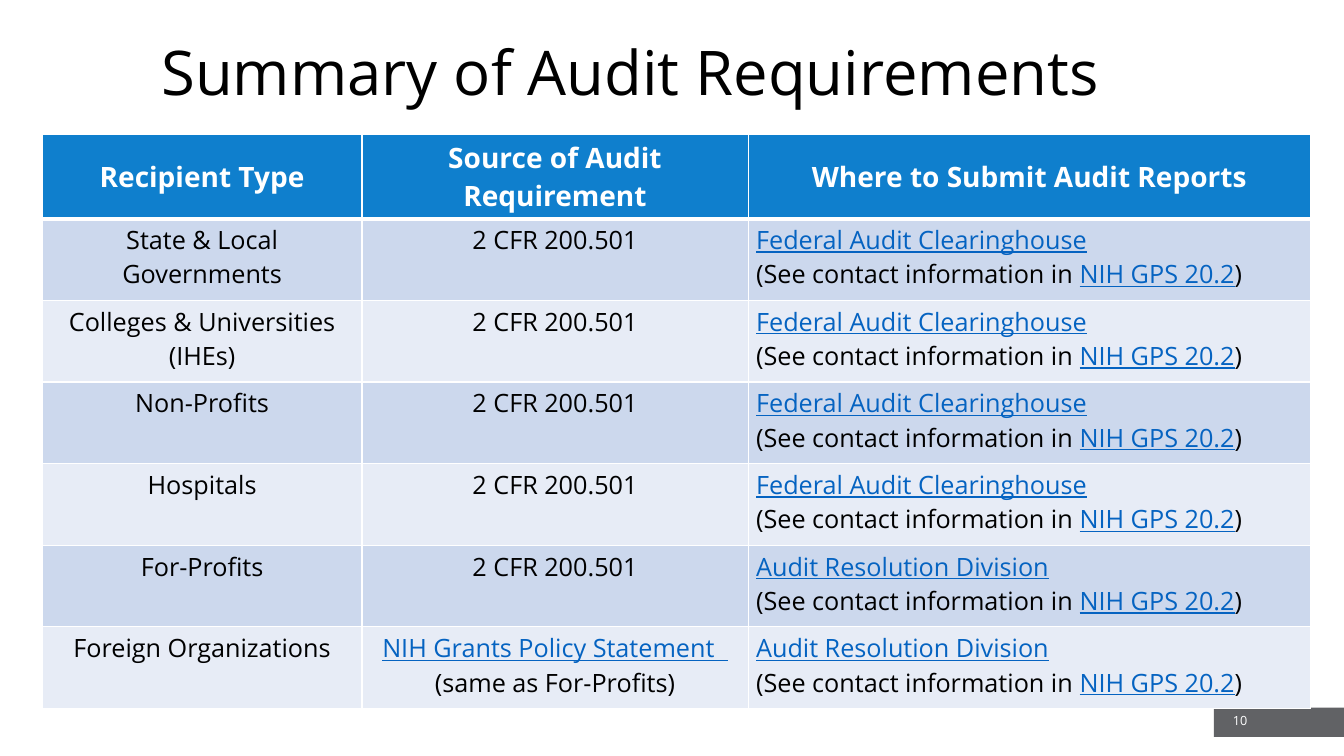
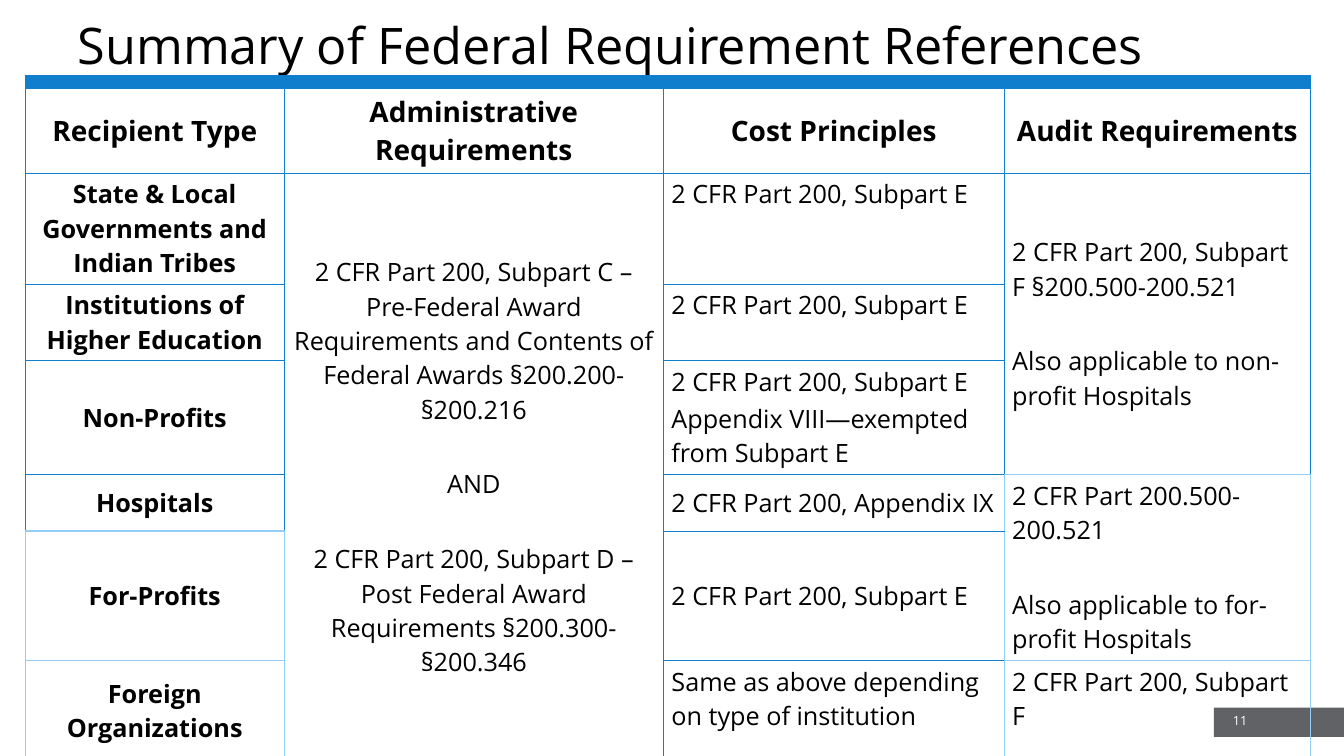
from dataclasses import dataclass

from lxml import etree
from pptx import Presentation
from pptx.dml.color import RGBColor
from pptx.enum.shapes import MSO_SHAPE
from pptx.enum.text import MSO_ANCHOR, MSO_AUTO_SIZE, PP_ALIGN
from pptx.oxml.ns import qn
from pptx.util import Inches, Pt

LEFT, CENTER, RIGHT = PP_ALIGN.LEFT, PP_ALIGN.CENTER, PP_ALIGN.RIGHT
TOP, MIDDLE = MSO_ANCHOR.TOP, MSO_ANCHOR.MIDDLE
RECTANGLE = MSO_SHAPE.RECTANGLE
NO_AUTOFIT = MSO_AUTO_SIZE.NONE

FONT = "Open Sans"
BLACK = RGBColor(0x00, 0x00, 0x00)
WHITE = RGBColor(0xFF, 0xFF, 0xFF)
BLUE = RGBColor(0x0F, 0x7F, 0xCD)
SKY = RGBColor(0x93, 0xCE, 0xF7)
LINK = RGBColor(0x05, 0x63, 0xC1)
GRAY = RGBColor(0x61, 0x62, 0x65)
ROW_FILLS = (RGBColor(0xCC, 0xD8, 0xED), RGBColor(0xE7, 0xEC, 0xF6))

TITLE_ONLY = 5
HEADER_SIZE, BODY_SIZE = 20, 18
LINE_GAP = 29  # one empty body line, in points


@dataclass(frozen=True)
class Span:
    text: str
    link: bool = False
    ends_line: bool = False


@dataclass(frozen=True)
class Para:
    spans: tuple[Span, ...]
    before: float = 0


@dataclass(frozen=True)
class CellStyle:
    size: int = BODY_SIZE
    bold: bool = False
    color: RGBColor = BLACK
    align: PP_ALIGN = CENTER
    anchor: MSO_ANCHOR = MIDDLE


@dataclass(frozen=True)
class Border:
    color: RGBColor
    width: float


def plain(text: str, before: float = 0) -> Para:
    return Para((Span(text),), before)


def submit_to(office: str) -> Para:
    return Para((
        Span(office, link=True, ends_line=True),
        Span("(See contact information in "),
        Span("NIH GPS 20.2", link=True),
        Span(")"),
    ))


# Audit requirements: recipient, source, where to submit
CFR_501 = plain("2 CFR 200.501")
CLEARINGHOUSE = submit_to("Federal Audit Clearinghouse")
RESOLUTION = submit_to("Audit Resolution Division")
POLICY_STATEMENT = Para((
    Span("NIH Grants Policy Statement  ", link=True, ends_line=True),
    Span("(same as For-Profits)"),
))
AUDIT_HEADERS = ("Recipient Type", "Source of Audit Requirement",
                 "Where to Submit Audit Reports")
AUDIT_ROWS = (
    ("State & Local Governments", CFR_501, CLEARINGHOUSE),
    ("Colleges & Universities (IHEs)", CFR_501, CLEARINGHOUSE),
    ("Non-Profits", CFR_501, CLEARINGHOUSE),
    ("Hospitals", CFR_501, CLEARINGHOUSE),
    ("For-Profits", CFR_501, RESOLUTION),
    ("Foreign Organizations", POLICY_STATEMENT, RESOLUTION),
)

# Federal references
REFERENCE_HEADERS = ("Recipient Type", "Administrative Requirements",
                     "Cost Principles", "Audit Requirements")
RECIPIENTS = (
    "State & Local Governments and Indian Tribes",
    "Institutions of Higher Education",
    "Non-Profits",
    "Hospitals",
    "For-Profits",
    "Foreign Organizations",
)
ADMIN_RULES = (
    plain("2 CFR Part 200, Subpart C – Pre-Federal Award Requirements and "
          "Contents of Federal Awards §200.200-§200.216"),
    plain("AND", LINE_GAP),
    plain("2 CFR Part 200, Subpart D – Post Federal Award Requirements "
          "§200.300-§200.346", LINE_GAP),
)
SUBPART_E = plain("2 CFR Part 200, Subpart E")
COST_RULES = (
    ((SUBPART_E,), TOP),
    ((SUBPART_E,), TOP),
    ((SUBPART_E, plain("Appendix VIII—exempted from Subpart E", 2)), TOP),
    ((plain("2 CFR Part 200, Appendix IX"),), MIDDLE),
    ((SUBPART_E,), MIDDLE),
    ((plain("Same as above depending on type of institution"),), TOP),
)
# First row, last row, paragraphs, anchor
AUDIT_RULES = (
    (2, 4, (plain("2 CFR Part 200, Subpart F §200.500-200.521"),
            plain("Also applicable to non-profit Hospitals", LINE_GAP)), MIDDLE),
    (5, 6, (plain("2 CFR Part 200.500-200.521"),
            plain("Also applicable to for-profit Hospitals", LINE_GAP)), MIDDLE),
    (7, 7, (plain("2 CFR Part 200, Subpart F"),), TOP),
)
SKY_CELLS = {(6, 0), (7, 0), (5, 3), (6, 3), (7, 3)}


def add_run(paragraph, text: str, size: float, color: RGBColor,
            bold: bool = False, underline: bool = False) -> None:
    run = paragraph.add_run()
    run.text = text
    font = run.font
    font.name, font.size, font.bold = FONT, Pt(size), bold
    font.color.rgb = color
    if underline:
        font.underline = True


def fill_cell(cell, paras: tuple[Para, ...], style: CellStyle) -> None:
    cell.vertical_anchor = style.anchor
    cell.margin_left = cell.margin_right = Inches(0.08)
    cell.margin_top = cell.margin_bottom = Inches(0.04)
    frame = cell.text_frame
    for index, para in enumerate(paras):
        paragraph = frame.add_paragraph() if index else frame.paragraphs[0]
        paragraph.alignment = style.align
        if para.before:
            paragraph.space_before = Pt(para.before)
        for span in para.spans:
            add_run(paragraph, span.text, style.size,
                    LINK if span.link else style.color, style.bold, span.link)
            if span.ends_line:
                paragraph.add_line_break()


def set_borders(cell, borders: dict[str, Border]) -> None:
    """Draw the L, R, T and B edges, ahead of the fill as the schema asks."""
    properties = cell._tc.get_or_add_tcPr()
    for index, side in enumerate("LRTB"):
        border = borders[side]
        line = etree.Element(qn(f"a:ln{side}"), w=str(Pt(border.width)))
        fill = etree.SubElement(line, qn("a:solidFill"))
        etree.SubElement(fill, qn("a:srgbClr"), val=str(border.color))
        properties.insert(index, line)


def set_fill(cell, color: RGBColor) -> None:
    cell.fill.solid()
    cell.fill.fore_color.rgb = color


def add_grid(slide, left: float, top: float, widths: tuple[float, ...],
             heights: tuple[float, ...]):
    frame = slide.shapes.add_table(
        len(heights), len(widths), Inches(left), Inches(top),
        Inches(sum(widths)), Inches(sum(heights)))
    grid = frame.table
    grid.first_row = grid.horz_banding = False
    for column, width in zip(grid.columns, widths):
        column.width = Inches(width)
    for row, height in zip(grid.rows, heights):
        row.height = Inches(height)
    return grid


def add_titled_slide(prs, title: str, left: float, top: float, size: int):
    slide = prs.slides.add_slide(prs.slide_layouts[TITLE_ONLY])
    heading = slide.shapes.title
    heading.left, heading.top = Inches(left), Inches(top)
    heading.width, heading.height = Inches(11.5), Inches(1.45)
    frame = heading.text_frame
    frame.auto_size = NO_AUTOFIT
    frame.vertical_anchor = MIDDLE
    paragraph = frame.paragraphs[0]
    paragraph.alignment = LEFT
    paragraph.line_spacing = 0.9
    add_run(paragraph, title, size, BLACK)
    return slide


def add_page_number(slide, number: int) -> None:
    box = slide.shapes.add_textbox(Inches(9.47), Inches(6.95), Inches(3), Inches(0.4))
    frame = box.text_frame
    frame.word_wrap = True
    frame.vertical_anchor = MIDDLE
    frame.paragraphs[0].alignment = RIGHT
    add_run(frame.paragraphs[0], str(number), 9, WHITE)


def add_footer_band(slide) -> None:
    """Put the footer band on the layout, so that every slide shows it."""
    band = slide.shapes.add_shape(
        RECTANGLE, Inches(12.04), Inches(7.02), Inches(1.29), Inches(0.29))
    band.shadow.inherit = False
    band.fill.solid()
    band.fill.fore_color.rgb = GRAY
    band.line.fill.background()
    slide.slide_layout.shapes.element.append(band.element)


def add_audit_table(slide) -> None:
    grid = add_grid(slide, 0.42, 1.33, (3.17, 3.83, 5.58), (0.84,) + (0.81,) * 6)
    thin, thick = Border(WHITE, 1), Border(WHITE, 3)
    header = CellStyle(size=HEADER_SIZE, bold=True, color=WHITE)
    for row, contents in enumerate((AUDIT_HEADERS, *AUDIT_ROWS)):
        for col, content in enumerate(contents):
            cell = grid.cell(row, col)
            para = plain(content) if isinstance(content, str) else content
            body = CellStyle(align=LEFT if col == 2 else CENTER, anchor=TOP)
            fill_cell(cell, (para,), body if row else header)
            set_fill(cell, ROW_FILLS[(row - 1) % 2] if row else BLUE)
            set_borders(cell, {"L": thin, "R": thin,
                               "T": thick if row == 1 else thin,
                               "B": thin if row else thick})


def add_reference_table(slide) -> None:
    heights = (0.13, 0.83, 1.1, 0.76, 1.13, 0.56, 1.28, 1)
    grid = add_grid(slide, 0.25, 0.75, (2.57, 3.76, 3.38, 3.04), heights)

    # Blue band and outlines: an edge is sky blue beside any sky cell
    blue, sky = Border(BLUE, 0.5), Border(SKY, 1)
    steps = {"L": (0, -1), "R": (0, 1), "T": (-1, 0), "B": (1, 0)}
    for row in range(len(heights)):
        for col in range(len(REFERENCE_HEADERS)):
            cell = grid.cell(row, col)
            if row:
                cell.fill.background()
            else:
                set_fill(cell, BLUE)
                cell.margin_top = cell.margin_bottom = 0
                cell.text_frame.paragraphs[0].font.size = Pt(1)
            set_borders(cell, {
                side: sky if {(row, col), (row + down, col + across)} & SKY_CELLS
                else blue
                for side, (down, across) in steps.items()})
    grid.cell(0, 0).merge(grid.cell(0, 2))

    # Headers and recipients
    for col, text in enumerate(REFERENCE_HEADERS):
        fill_cell(grid.cell(1, col), (plain(text),),
                  CellStyle(size=HEADER_SIZE, bold=True))
    for row, text in enumerate(RECIPIENTS, start=2):
        fill_cell(grid.cell(row, 0), (plain(text),), CellStyle(bold=True))

    # Rules by column
    grid.cell(2, 1).merge(grid.cell(7, 1))
    fill_cell(grid.cell(2, 1), ADMIN_RULES, CellStyle())
    for row, (paras, anchor) in enumerate(COST_RULES, start=2):
        fill_cell(grid.cell(row, 2), paras, CellStyle(align=LEFT, anchor=anchor))
    for first, last, paras, anchor in AUDIT_RULES:
        if last > first:
            grid.cell(first, 3).merge(grid.cell(last, 3))
        fill_cell(grid.cell(first, 3), paras, CellStyle(align=LEFT, anchor=anchor))


def main() -> None:
    prs = Presentation()
    prs.slide_width, prs.slide_height = Inches(13.33), Inches(7.5)

    audit = add_titled_slide(prs, "Summary of Audit Requirements", 1.5, 0.02, 44)
    add_footer_band(audit)
    add_page_number(audit, 10)
    add_audit_table(audit)

    references = add_titled_slide(
        prs, "Summary of Federal Requirement References", 0.67, -0.25, 36)
    add_reference_table(references)
    add_page_number(references, 11)

    prs.save("out.pptx")


if __name__ == "__main__":
    main()
